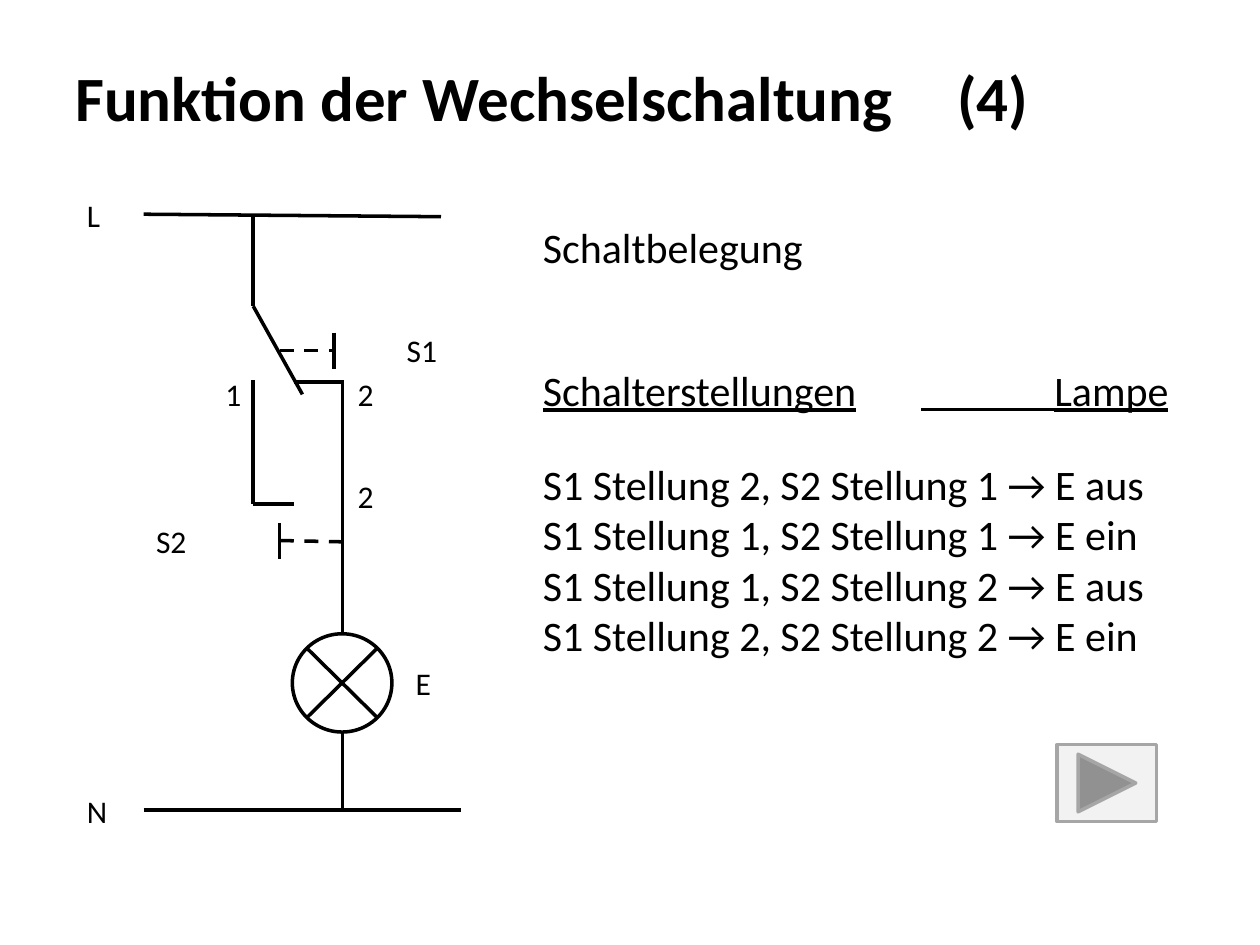
from dataclasses import dataclass

from lxml import etree
from pptx import Presentation
from pptx.dml.color import RGBColor
from pptx.enum import dml, shapes, text
from pptx.oxml.ns import qn
from pptx.util import Inches, Pt


@dataclass(frozen=True)
class Theme:
    font: str = "Calibri"
    ink: RGBColor = RGBColor(0x00, 0x00, 0x00)
    paper: RGBColor = RGBColor(0xFF, 0xFF, 0xFF)
    button_fill: RGBColor = RGBColor(0xF2, 0xF2, 0xF2)
    button_line: RGBColor = RGBColor(0xA6, 0xA6, 0xA6)
    title_size: float = 36
    body_size: float = 24
    label_size: float = 18
    line_width: float = 2


@dataclass(frozen=True)
class Wire:
    x1: float
    y1: float
    x2: float
    y2: float
    dashed: bool = False
    width: float = Theme.line_width


@dataclass(frozen=True)
class TextBlock:
    left: float
    top: float
    width: float
    height: float
    lines: tuple[str, ...]
    size: float = Theme.label_size
    bold: bool = False
    underline: bool = False
    tab: float | None = None
    anchor: text.MSO_ANCHOR = text.MSO_ANCHOR.TOP


@dataclass(frozen=True)
class Symbol:
    kind: shapes.MSO_SHAPE
    left: float
    top: float
    width: float
    height: float
    fill: RGBColor
    line: RGBColor


THEME = Theme()
LEFT_X, RIGHT_X = 2.01, 2.72  # the two conductors between the switches
TEXT_X = 4.21

BACK_WIRES = (
    Wire(2.22, 2.78, 2.65, 2.78, dashed=True),  # S1 actuator
    Wire(LEFT_X, 2.43, 2.4, 3.13),  # S1 blade
    Wire(2.22, 4.15, 2.22, 4.44),  # S2 button
    Wire(2.33, 3.03, RIGHT_X, 3.03),  # S1 contact 2
    Wire(1.14, 1.7, 3.5, 1.72),  # L
    Wire(1.14, 6.43, 3.66, 6.43),  # N
    Wire(LEFT_X, 1.72, LEFT_X, 2.43, width=2.25),
    Wire(RIGHT_X, 5.81, RIGHT_X, 6.44),
)
FRONT_WIRES = (
    Wire(LEFT_X, 3.02, LEFT_X, 4),
    Wire(RIGHT_X, 3.02, RIGHT_X, 4),
    Wire(RIGHT_X, 3.94, RIGHT_X, 4.64),  # S2 blade
    Wire(LEFT_X, 4, 2.33, 4),  # S2 contact 1
    Wire(RIGHT_X, 4.64, RIGHT_X, 5.02),
    Wire(2.22, 4.29, 2.71, 4.3, dashed=True),  # S2 actuator
    Wire(2.65, 2.64, 2.65, 2.93),  # S1 button
    Wire(7.31, 3.25, 8.37, 3.25),  # rule before the lamp heading
)
LAMP = Symbol(shapes.MSO_SHAPE.FLOWCHART_SUMMING_JUNCTION,
              2.32, 5.03, 0.79, 0.78, THEME.paper, THEME.ink)
NEXT_BUTTON = Symbol(shapes.MSO_SHAPE.ACTION_BUTTON_FORWARD_OR_NEXT,
                     8.39, 5.91, 0.79, 0.61, THEME.button_fill, THEME.button_line)

TITLE = TextBlock(0.5, 0.3, 9, 0.93, ("Funktion der Wechselschaltung\t(4)",),
                  THEME.title_size, bold=True, tab=7, anchor=text.MSO_ANCHOR.MIDDLE)
LABELS = tuple(TextBlock(left, top, width, 0.4, (name,)) for name, left, top, width in (
    ("L", 0.59, 1.51, 0.31),
    ("N", 0.59, 6.24, 0.31),
    ("S1", 3.13, 2.58, 0.47),
    ("S2", 1.14, 4.09, 0.47),
    ("1", 1.69, 2.93, 0.24),
    ("2", 2.74, 2.93, 0.34),
    ("2", 2.74, 3.74, 0.39),
    ("E", 3.2, 5.22, 0.34),
))
POSITIONS = ((2, 1, "aus"), (1, 1, "ein"), (1, 2, "aus"), (2, 2, "ein"))
BODY = (
    TextBlock(TEXT_X, 1.71, 4.17, 0.5, ("Schaltbelegung",), THEME.body_size),
    TextBlock(TEXT_X, 2.84, 5.4, 0.5, ("Schalterstellungen\tLampe",),
              THEME.body_size, underline=True, tab=4.06),
    TextBlock(TEXT_X, 3.59, 5.2, 1.7,
              tuple(f"S1 Stellung {s1}, S2 Stellung {s2} → E {lamp}"
                    for s1, s2, lamp in POSITIONS), THEME.body_size),
)


def draw_wire(slide, wire: Wire) -> None:
    connector = slide.shapes.add_connector(
        shapes.MSO_CONNECTOR.STRAIGHT,
        Inches(wire.x1), Inches(wire.y1), Inches(wire.x2), Inches(wire.y2))
    connector.line.color.rgb = THEME.ink
    connector.line.width = Pt(wire.width)
    if wire.dashed:
        connector.line.dash_style = dml.MSO_LINE.DASH
    etree.SubElement(connector._element.spPr, qn("a:effectLst"))


def draw_symbol(slide, symbol: Symbol) -> None:
    shape = slide.shapes.add_shape(
        symbol.kind, Inches(symbol.left), Inches(symbol.top),
        Inches(symbol.width), Inches(symbol.height))
    shape.shadow.inherit = False
    shape.fill.solid()
    shape.fill.fore_color.rgb = symbol.fill
    shape.line.color.rgb = symbol.line
    shape.line.width = Pt(THEME.line_width)


def set_tab_stop(paragraph, position: float) -> None:
    tabs = etree.SubElement(paragraph._p.get_or_add_pPr(), qn("a:tabLst"))
    etree.SubElement(tabs, qn("a:tab"), pos=str(Inches(position)), algn="l")


def draw_text(slide, block: TextBlock) -> None:
    box = slide.shapes.add_textbox(Inches(block.left), Inches(block.top),
                                   Inches(block.width), Inches(block.height))
    frame = box.text_frame
    frame.word_wrap = True
    frame.vertical_anchor = block.anchor
    for index, line in enumerate(block.lines):
        paragraph = frame.add_paragraph() if index else frame.paragraphs[0]
        if block.tab is not None:
            set_tab_stop(paragraph, block.tab)
        run = paragraph.add_run()
        run.text = line
        run.font.name = THEME.font
        run.font.size = Pt(block.size)
        run.font.color.rgb = THEME.ink
        run.font.bold = block.bold
        run.font.underline = block.underline


def main() -> None:
    presentation = Presentation()
    presentation.slide_width = Inches(10)
    presentation.slide_height = Inches(7.5)
    slide = presentation.slides.add_slide(presentation.slide_layouts[6])

    draw_text(slide, TITLE)
    for wire in BACK_WIRES:
        draw_wire(slide, wire)
    draw_symbol(slide, LAMP)
    for wire in FRONT_WIRES:
        draw_wire(slide, wire)
    for block in LABELS + BODY:
        draw_text(slide, block)
    draw_symbol(slide, NEXT_BUTTON)

    presentation.save("out.pptx")


if __name__ == "__main__":
    main()
